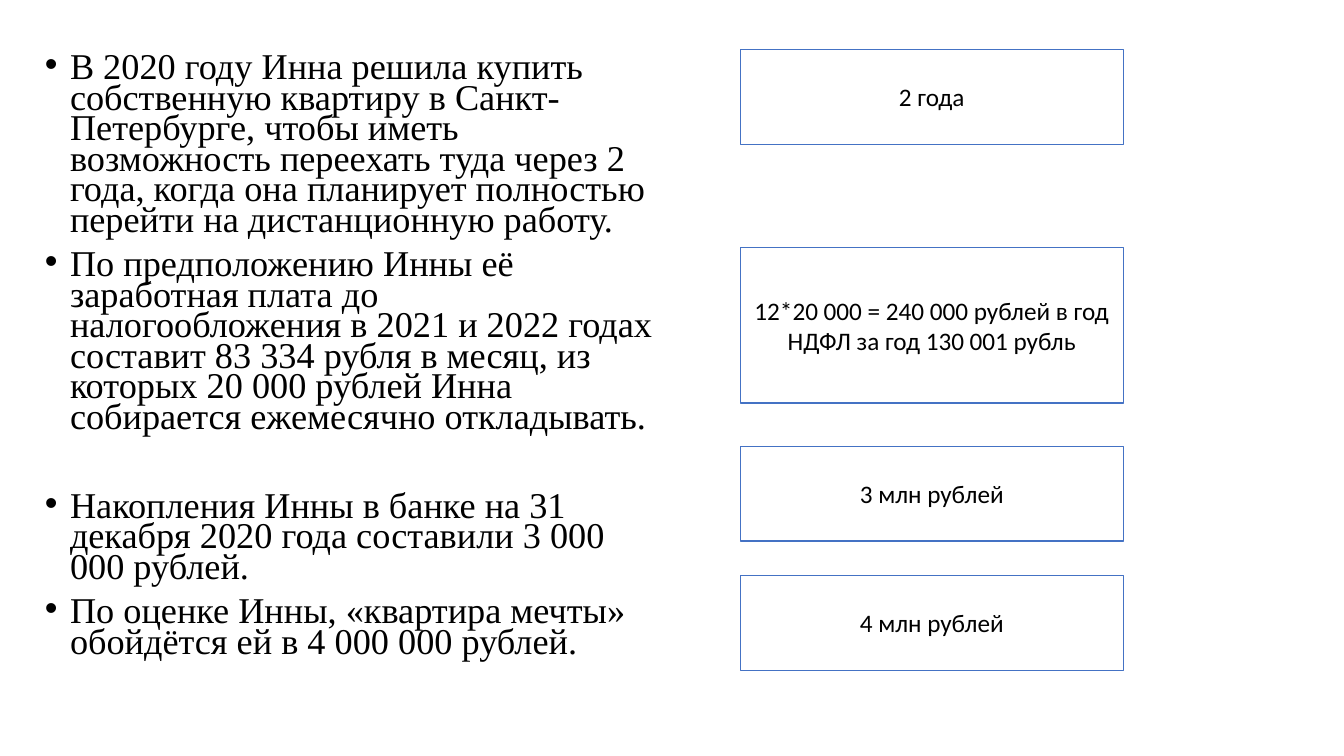
from dataclasses import dataclass

from lxml.etree import SubElement
from pptx import Presentation
from pptx.dml.color import RGBColor
from pptx.enum.shapes import MSO_SHAPE
from pptx.enum.text import MSO_ANCHOR, MSO_AUTO_SIZE, PP_ALIGN
from pptx.oxml.ns import qn
from pptx.util import Pt

BLACK, WHITE, BLUE = "000000", "FFFFFF", "4472C4"
STORY_FONT = {"name": "Times New Roman", "size": Pt(25.9)}
ANSWER_FONT = {"name": "Calibri", "size": Pt(18)}
ANSWER_LEFT, ANSWER_WIDTH = 528.8, 273.6
BULLET_INDENT = 18


@dataclass
class StoryPoint:
    text: str
    space_before: float = 10


@dataclass
class Answer:
    top: float
    lines: tuple[str, ...]
    height: float = 67.7


STORY = [
    StoryPoint("В 2020 году Инна решила купить собственную квартиру в Санкт-Петербурге, "
               "чтобы иметь возможность переехать туда через 2 года, когда она планирует "
               "полностью перейти на дистанционную работу."),
    StoryPoint("По предположению Инны её заработная плата до налогообложения в 2021 и "
               "2022 годах составит 83 334 рубля в месяц, из которых 20 000 рублей Инна "
               "собирается ежемесячно откладывать."),
    StoryPoint("Накопления Инны в банке на 31 декабря 2020 года составили "
               "3 000 000 рублей.", space_before=42),
    StoryPoint("По оценке Инны, «квартира мечты» обойдётся ей в 4 000 000 рублей."),
]

ANSWERS = [
    Answer(35.4, ("2 года",)),
    Answer(177, ("12*20 000 = 240 000 рублей в год", "НДФЛ за год 130 001 рубль"), 110.9),
    Answer(318.8, ("3 млн рублей",)),
    Answer(411.1, ("4 млн рублей",)),
]


def color(hex_value: str) -> RGBColor:
    return RGBColor.from_string(hex_value)


def apply_format(target, values: dict) -> None:
    for name, value in values.items():
        setattr(target, name, value)


def add_para(frame, index: int, text: str, font: dict, layout: dict):
    para = frame.paragraphs[0] if index == 0 else frame.add_paragraph()
    apply_format(para, layout)
    span = para.add_run()
    span.text = text
    apply_format(span.font, font)
    span.font.color.rgb = color(BLACK)
    return para


def add_bullet(para) -> None:
    properties = para._p.get_or_add_pPr()
    properties.set("marL", str(Pt(BULLET_INDENT)))
    properties.set("indent", str(-Pt(BULLET_INDENT)))
    SubElement(properties, qn("a:buFont")).set("typeface", "Arial")
    SubElement(properties, qn("a:buChar")).set("char", "•")


def fill_story(body, points: list[StoryPoint]) -> None:
    apply_format(body, {"left": Pt(24.8), "top": Pt(36), "width": Pt(449.3), "height": Pt(450.7)})
    frame = body.text_frame
    apply_format(frame, {"word_wrap": True, "auto_size": MSO_AUTO_SIZE.NONE,
                         "vertical_anchor": MSO_ANCHOR.TOP})
    for index, point in enumerate(points):
        layout = {"line_spacing": 0.7, "space_before": Pt(point.space_before)}
        add_bullet(add_para(frame, index, point.text, STORY_FONT, layout))


def add_answer(page, answer: Answer) -> None:
    box = page.shapes.add_shape(MSO_SHAPE.RECTANGLE, Pt(ANSWER_LEFT), Pt(answer.top),
                                Pt(ANSWER_WIDTH), Pt(answer.height))
    box.shadow.inherit = False
    box.fill.solid()
    box.fill.fore_color.rgb = color(WHITE)
    box.line.color.rgb = color(BLUE)
    box.line.width = Pt(1)
    apply_format(box.text_frame, {"word_wrap": True, "vertical_anchor": MSO_ANCHOR.MIDDLE})
    for index, line in enumerate(answer.lines):
        add_para(box.text_frame, index, line, ANSWER_FONT, {"alignment": PP_ALIGN.CENTER})


def main() -> None:
    deck = Presentation()
    apply_format(deck, {"slide_width": Pt(960), "slide_height": Pt(540)})
    page = deck.slides.add_slide(deck.slide_layouts.get_by_name("Title and Content"))

    # The slide has no title
    title = page.shapes.title.element
    title.getparent().remove(title)

    # Story on the left
    fill_story(page.placeholders[1], STORY)

    # Answers on the right
    for answer in ANSWERS:
        add_answer(page, answer)

    deck.save("out.pptx")


if __name__ == "__main__":
    main()
